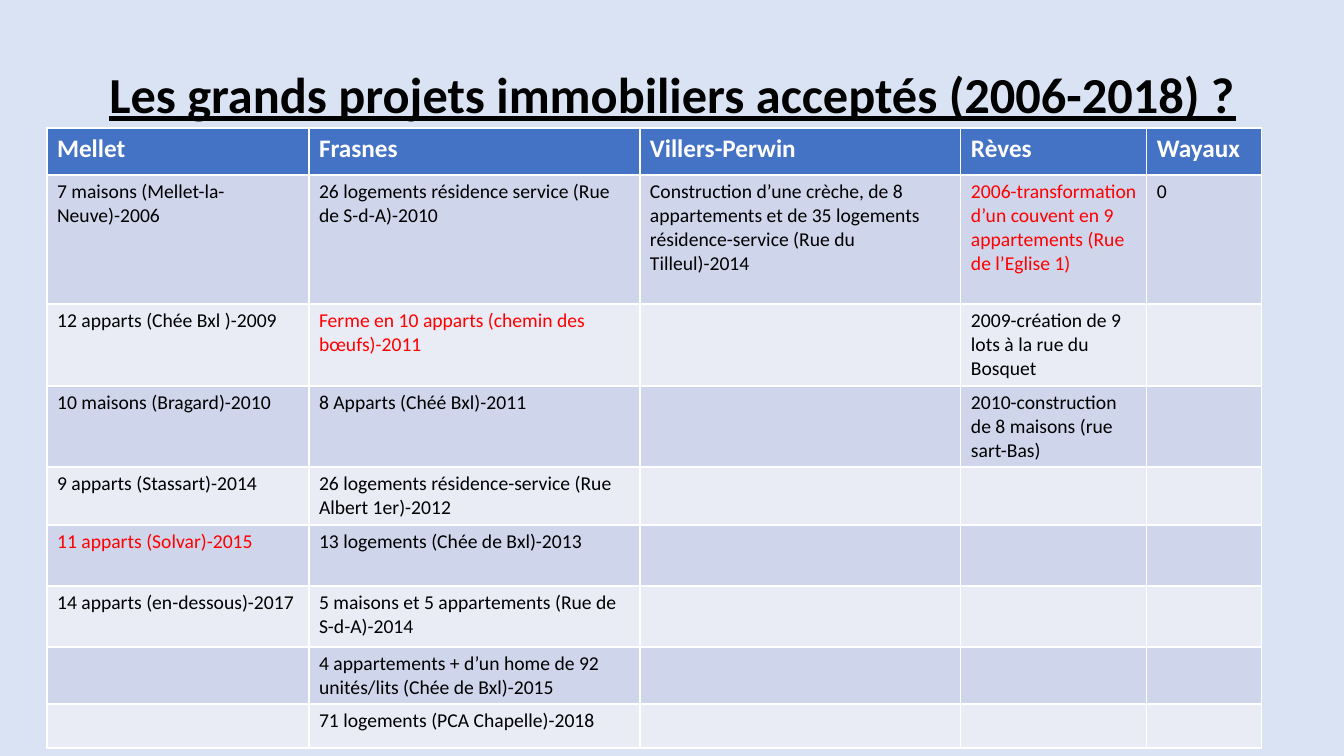
"""Build the slide listing the large housing projects accepted per village."""
from pptx import Presentation, util as u
from pptx.dml.color import RGBColor
from pptx.enum import text

PX = u.Inches(1) / 100.8
BACKGROUND = RGBColor(0xDA, 0xE3, 0xF3)
HEADER = RGBColor(0x44, 0x72, 0xC4)
BAND_DARK = RGBColor(0xCF, 0xD5, 0xEA)
BAND_LIGHT = RGBColor(0xE9, 0xEB, 0xF5)
BLACK = RGBColor(0, 0, 0)
WHITE = RGBColor(255, 255, 255)
RED = RGBColor(255, 0, 0)

COLUMN_WIDTHS = [262, 331, 321, 186, 115]
ROW_HEIGHTS = [47, 129, 82, 81, 58, 61, 61, 57, 44]
VILLAGES = {
    "Mellet": [
        "7 maisons (Mellet-la-Neuve)-2006",
        "12 apparts (Chée Bxl )-2009",
        "10 maisons (Bragard)-2010",
        "9 apparts (Stassart)-2014",
        "11 apparts (Solvar)-2015",
        "14 apparts (en-dessous)-2017",
    ],
    "Frasnes": [
        "26 logements résidence service (Rue de S-d-A)-2010",
        "Ferme en 10 apparts (chemin des bœufs)-2011",
        "8 Apparts (Chéé Bxl)-2011",
        "26 logements résidence-service (Rue Albert 1er)-2012",
        "13 logements (Chée de Bxl)-2013",
        "5 maisons et 5 appartements (Rue de S-d-A)-2014",
        "4 appartements + d’un home de 92 unités/lits (Chée de Bxl)-2015",
        "71 logements (PCA Chapelle)-2018",
    ],
    "Villers-Perwin": [
        "Construction d’une crèche, de 8 appartements et de 35 logements "
        "résidence-service (Rue du Tilleul)-2014",
    ],
    "Rèves": [
        "2006-transformation d’un couvent en 9 appartements (Rue de l’Eglise 1)",
        "2009-création de 9 lots à la rue du Bosquet",
        "2010-construction de 8 maisons (rue sart-Bas)",
    ],
    "Wayaux": ["0"],
}
RED_CELLS = {(5, 0), (2, 1), (1, 3)}


def px(n):
    return u.Emu(round(n * PX))


def style(p, size, color, bold):
    p.font.name = "Calibri"
    p.font.size = u.Pt(size)
    p.font.color.rgb = color
    p.font.bold = bold


prs = Presentation()
prs.slide_width, prs.slide_height = px(1344), px(756)
s = prs.slides.add_slide(prs.slide_layouts[6])
s.background.fill.solid()
s.background.fill.fore_color.rgb = BACKGROUND

tf = s.shapes.add_textbox(px(65), px(21), px(1215), px(108)).text_frame
tf.word_wrap = True
tf.vertical_anchor = text.MSO_ANCHOR.BOTTOM
p = tf.paragraphs[0]
p.text = "Les grands projets immobiliers acceptés (2006-2018) ?"
p.alignment = text.PP_ALIGN.CENTER
p.line_spacing = 0.9
style(p, 36, BLACK, True)
p.font.underline = True

table = s.shapes.add_table(
    len(ROW_HEIGHTS), len(COLUMN_WIDTHS), px(47), px(128),
    px(sum(COLUMN_WIDTHS)), px(sum(ROW_HEIGHTS))).table
for row, height in zip(table.rows, ROW_HEIGHTS):
    row.height = px(height)

for c, (village, projects) in enumerate(VILLAGES.items()):
    table.columns[c].width = px(COLUMN_WIDTHS[c])
    entries = [village] + projects
    for r in range(len(ROW_HEIGHTS)):
        cell = table.cell(r, c)
        cell.fill.solid()
        p = cell.text_frame.paragraphs[0]
        if r < len(entries):
            p.text = entries[r]
        if r == 0:
            cell.fill.fore_color.rgb = HEADER
            style(p, 18, WHITE, True)
        else:
            cell.fill.fore_color.rgb = BAND_DARK if r % 2 else BAND_LIGHT
            style(p, 14, RED if (r, c) in RED_CELLS else BLACK, False)

prs.save("out.pptx")
